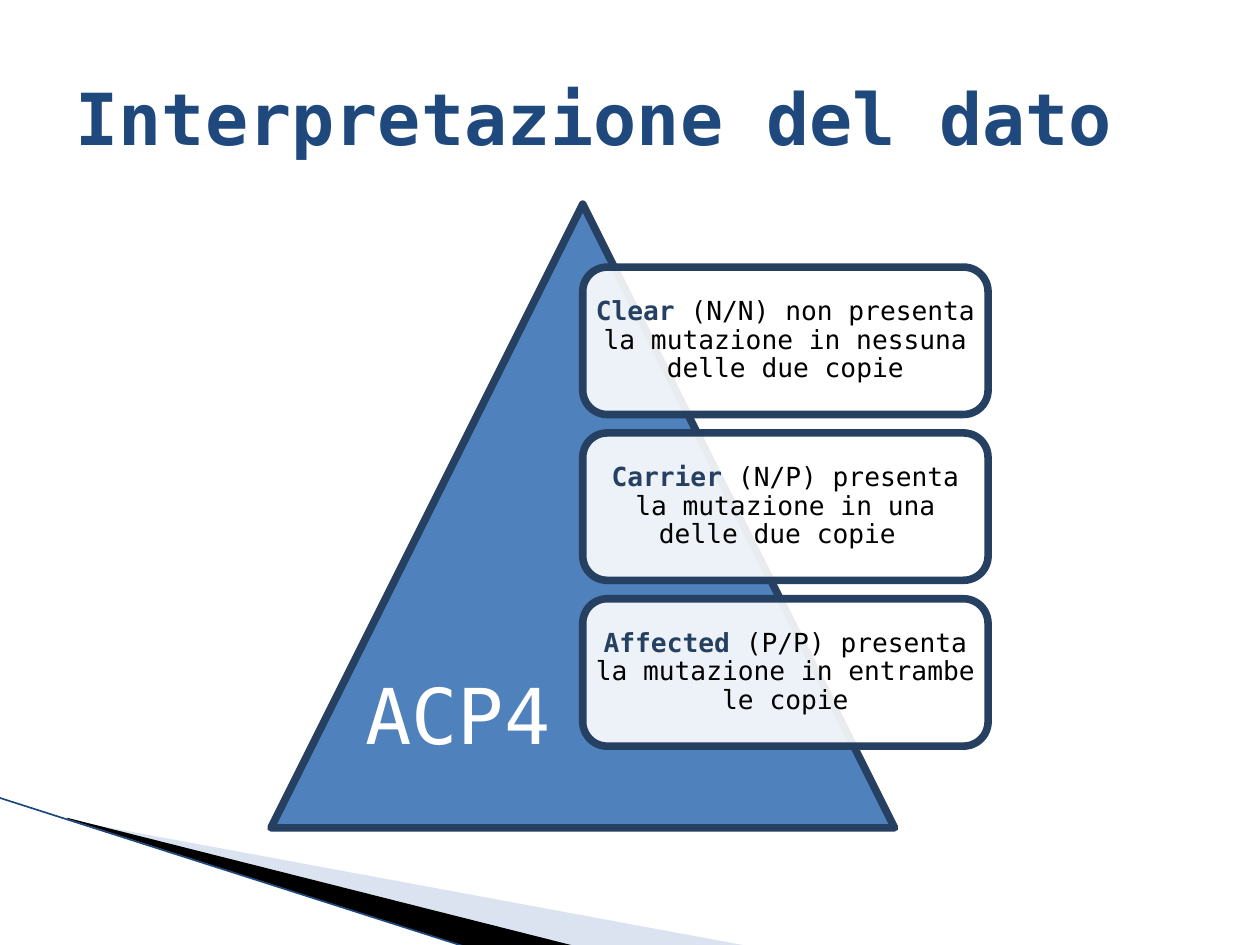
import pptx
import pptx.util
import pptx.dml.color
import pptx.enum.shapes
import pptx.enum.text
import pptx.oxml.ns
from lxml import etree

Inches = pptx.util.Inches
Pt = pptx.util.Pt
RGBColor = pptx.dml.color.RGBColor
Kind = pptx.enum.shapes.MSO_SHAPE
Align = pptx.enum.text.PP_ALIGN
Anchor = pptx.enum.text.MSO_ANCHOR
qn = pptx.oxml.ns.qn

FONT = "DejaVu Sans Mono"
NAVY = RGBColor(0x25, 0x40, 0x61)
TITLE = RGBColor(0x1F, 0x49, 0x7D)
BLUE = RGBColor(0x4F, 0x81, 0xBD)
PALE = RGBColor(0xA7, 0xB9, 0xDB)
BLACK = RGBColor(0, 0, 0)
WHITE = RGBColor(255, 255, 255)

HEAD = "Interpretazione del dato"
GENE = "ACP4"
CARDS = [
    ("Clear", " (N/N) non presenta la mutazione in nessuna delle due copie"),
    ("Carrier ", "(N/P) presenta la mutazione in una delle due copie "),
    ("Affected", " (P/P) presenta la mutazione in entrambe le copie"),
]
WEDGES = [
    ([(0.55, 6.51), (5.95, 7.51), (4.56, 7.51), (0.55, 6.5)], PALE, 40),
    ([(0.53, 6.49), (4.57, 7.51), (3.72, 7.52), (0.54, 6.5)], BLACK, 100),
]
SIDE = 4.95
LEFT, TOP = 2.15, 1.62
WIDE, HIGH = SIDE * 0.65, 1.17
STEP = HIGH * 9 / 8


def paint(shape, color, alpha=100):
    shape.shadow.inherit = False
    shape.fill.solid()
    shape.fill.fore_color.rgb = color
    if alpha < 100:
        node = shape.fill._xPr.find(qn("a:solidFill"))[0]
        etree.SubElement(node, qn("a:alpha"), val=str(alpha * 1000))


def edge(shape):
    shape.line.color.rgb = NAVY
    shape.line.width = Pt(4.33)


def write(para, text, size, color, bold=False):
    run = para.add_run()
    run.text = text
    run.font.name = FONT
    run.font.size = Pt(size)
    run.font.bold = bold
    run.font.color.rgb = color


def inset(frame, size):
    frame.margin_left = frame.margin_right = Inches(size)
    frame.margin_top = frame.margin_bottom = Inches(size)


def swoosh(shapes):
    for points, color, alpha in WEDGES:
        spots = [(Inches(x), Inches(y)) for x, y in points]
        pen = shapes.build_freeform(*spots[0], scale=1.0)
        pen.add_line_segments(spots[1:], close=True)
        wedge = pen.convert_to_shape()
        paint(wedge, color, alpha)
        wedge.line.fill.background()
    line = shapes.add_connector(
        pptx.enum.shapes.MSO_CONNECTOR.STRAIGHT,
        Inches(-0.01), Inches(6.33), Inches(3.71), Inches(7.52))
    line.line.color.rgb = TITLE
    line.line.width = Pt(0.95)
    etree.SubElement(line._element.spPr, qn("a:effectLst"))


def pyramid(shapes):
    base = shapes.add_shape(Kind.ISOSCELES_TRIANGLE, Inches(LEFT),
                            Inches(TOP), Inches(SIDE), Inches(SIDE))
    paint(base, BLUE)
    edge(base)
    for row, (name, text) in enumerate(CARDS):
        card = shapes.add_shape(
            Kind.ROUNDED_RECTANGLE, Inches(LEFT + SIDE / 2),
            Inches(TOP + 0.5 + row * STEP), Inches(WIDE), Inches(HIGH))
        paint(card, WHITE, 90)
        edge(card)
        frame = card.text_frame
        frame.word_wrap = True
        frame.vertical_anchor = Anchor.MIDDLE
        inset(frame, 0)
        para = frame.paragraphs[0]
        para.alignment = Align.CENTER
        para.line_spacing = 0.9
        write(para, name, 15, NAVY, True)
        write(para, text, 15, BLACK)


def main():
    deck = pptx.Presentation()
    deck.slide_width, deck.slide_height = Inches(10), Inches(7.5)
    slide = deck.slides.add_slide(deck.slide_layouts[5])
    shapes = slide.shapes
    swoosh(shapes)
    pyramid(shapes)

    title = shapes.title
    title.left, title.top = Inches(0.5), Inches(0.3)
    title.width, title.height = Inches(9), Inches(1.25)
    title.text_frame.vertical_anchor = Anchor.MIDDLE
    para = title.text_frame.paragraphs[0]
    para.alignment = Align.LEFT
    write(para, HEAD, 41, TITLE, True)

    label = shapes.add_textbox(Inches(2.74), Inches(5.25),
                               Inches(1.79), Inches(0.84))
    label.text_frame.word_wrap = False
    para = label.text_frame.paragraphs[0]
    para.alignment = Align.CENTER
    write(para, GENE, 44, WHITE)
    deck.save("out.pptx")


if __name__ == "__main__":
    main()
